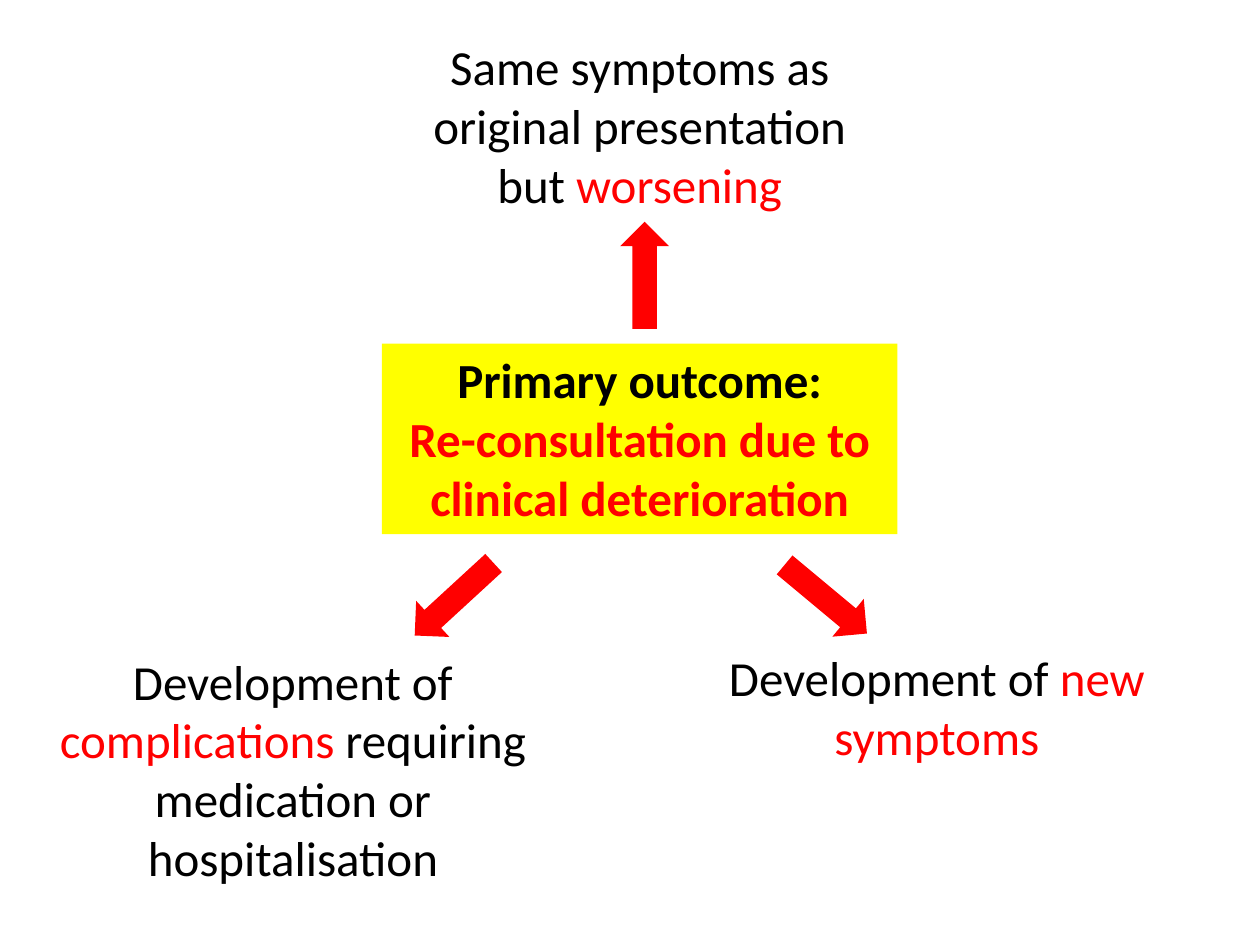
from pptx import Presentation, util as u
from pptx.dml.color import RGBColor
from pptx.enum import shapes, text

BLACK = RGBColor(0, 0, 0)
RED = RGBColor(255, 0, 0)
YELLOW = RGBColor(255, 255, 0)

BOX_WIDTH = 10.39
ARROW_SIZE = (0.99, 2.16)


class OutcomeSlide:
    """Style and current slide, with one method per kind of element."""

    font = {"name": "Calibri", "size": u.Pt(28)}
    frame = {"word_wrap": True, "auto_size": text.MSO_AUTO_SIZE.SHAPE_TO_FIT_TEXT,
             "vertical_anchor": text.MSO_ANCHOR.TOP}

    def __init__(self, slide):
        self.slide = slide

    def apply(self, target, values):
        for key, value in values.items():
            setattr(target, key, value)

    def block(self, kind, left, top, width, height, fill):
        block = self.slide.shapes.add_shape(
            kind, u.Cm(left), u.Cm(top), u.Cm(width), u.Cm(height))
        block.shadow.inherit = False
        block.fill.solid()
        block.fill.fore_color.rgb = fill
        block.line.fill.background()
        return block

    def wording(self, holder, paragraphs, bold=False):
        frame = holder.text_frame
        self.apply(frame, self.frame)
        for index, parts in enumerate(paragraphs):
            paragraph = frame.add_paragraph() if index else frame.paragraphs[0]
            paragraph.alignment = text.PP_ALIGN.CENTER
            for words, color in parts:
                run = paragraph.add_run()
                run.text = words
                self.apply(run.font, {**self.font, "bold": bold})
                run.font.color.rgb = color

    def outcome(self, left, top, height, paragraphs):
        box = self.block(shapes.MSO_SHAPE.RECTANGLE, left, top, BOX_WIDTH, height, YELLOW)
        self.wording(box, paragraphs, bold=True)

    def reason(self, left, top, height, parts):
        box = self.slide.shapes.add_textbox(
            u.Cm(left), u.Cm(top), u.Cm(BOX_WIDTH), u.Cm(height))
        self.wording(box, [parts])

    def arrow(self, left, top, rotation):
        arrow = self.block(shapes.MSO_SHAPE.UP_ARROW, left, top, *ARROW_SIZE, RED)
        arrow.rotation = rotation


def main():
    deck = Presentation()
    deck.slide_width, deck.slide_height = u.Cm(25.4), u.Cm(19.05)
    page = OutcomeSlide(deck.slides.add_slide(deck.slide_layouts[6]))

    # Central outcome
    page.outcome(7.7, 6.93, 3.84, [
        [("Primary outcome:", BLACK)],
        [("Re-consultation due to clinical deterioration", RED)],
    ])

    # Reasons around it
    page.reason(7.7, 0.61, 3.84, [
        ("Same symptoms as original presentation but ", BLACK), ("worsening", RED)])
    page.reason(13.69, 12.93, 2.65, [
        ("Development of ", BLACK), ("new symptoms", RED)])
    page.reason(0.71, 13.0, 5.05, [
        ("Development of ", BLACK), ("complications ", RED),
        ("requiring medication or hospitalisation", BLACK)])

    # Arrows from the outcome to each reason
    for left, top, rotation in [(12.5, 4.47, 0), (8.66, 11.0, 227.4), (16.15, 11.0, 129.8)]:
        page.arrow(left, top, rotation)

    deck.save("out.pptx")


if __name__ == "__main__":
    main()
